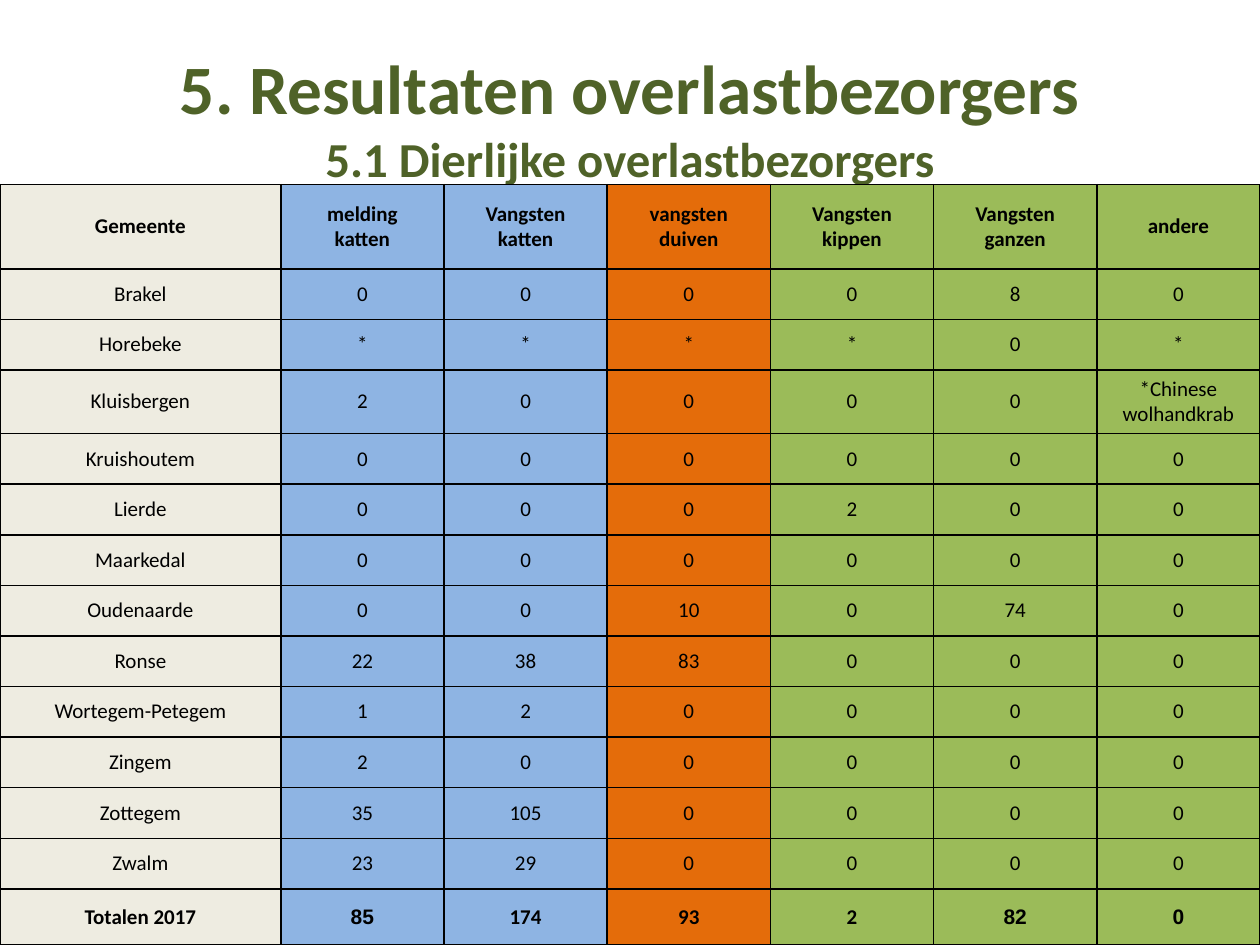
from dataclasses import dataclass

from lxml.etree import SubElement
from pptx import Presentation
from pptx.dml.color import RGBColor
from pptx.enum.text import MSO_ANCHOR, MSO_AUTO_SIZE, PP_ALIGN
from pptx.oxml.ns import qn
from pptx.slide import Slide
from pptx.table import _Cell
from pptx.util import Cm, Pt


@dataclass(frozen=True)
class Theme:
    title_color: str = "4F6228"
    ink: str = "000000"
    sand: str = "EEECE1"
    blue: str = "8EB4E3"
    orange: str = "E46C0A"
    green: str = "9BBB59"
    font: str = "Calibri"
    accent_font: str = "Arial"
    title_size: float = 39.6
    subtitle_size: float = 27.9
    table_size: float = 12
    border_width: float = 1


THEME = Theme()


@dataclass(frozen=True)
class Column:
    heading: str
    fill: str
    width: float = 3.29
    total_font: str = THEME.font


@dataclass(frozen=True)
class Municipality:
    name: str
    counts: tuple[str, ...]
    height: float = 1.02


COLUMNS = (
    Column("Gemeente", THEME.sand, width=5.66),
    Column("melding\nkatten", THEME.blue, total_font=THEME.accent_font),
    Column("Vangsten\nkatten", THEME.blue),
    Column("vangsten\nduiven", THEME.orange),
    Column("Vangsten\nkippen", THEME.green),
    Column("Vangsten\nganzen", THEME.green, total_font=THEME.accent_font),
    Column("andere", THEME.green, total_font=THEME.accent_font),
)

MUNICIPALITIES = (
    Municipality("Brakel", ("0", "0", "0", "0", "8", "0")),
    Municipality("Horebeke", ("*", "*", "*", "*", "0", "*")),
    Municipality("Kluisbergen", ("2", "0", "0", "0", "0", "*Chinese wolhandkrab"), 1.28),
    Municipality("Kruishoutem", ("0", "0", "0", "0", "0", "0")),
    Municipality("Lierde", ("0", "0", "0", "2", "0", "0")),
    Municipality("Maarkedal", ("0", "0", "0", "0", "0", "0")),
    Municipality("Oudenaarde", ("0", "0", "10", "0", "74", "0")),
    Municipality("Ronse", ("22", "38", "83", "0", "0", "0")),
    Municipality("Wortegem-Petegem", ("1", "2", "0", "0", "0", "0")),
    Municipality("Zingem", ("2", "0", "0", "0", "0", "0")),
    Municipality("Zottegem", ("35", "105", "0", "0", "0", "0")),
    Municipality("Zwalm", ("23", "29", "0", "0", "0", "0")),
)
TOTALS = Municipality("Totalen 2017", ("85", "174", "93", "2", "82", "0"), 1.13)
HEADER_HEIGHT = 1.7
TABLE_TOP = 3.72


def add_run(paragraph, text: str, size: float, color: str, bold: bool, font: str = THEME.font) -> None:
    run = paragraph.add_run()
    run.text = text
    run.font.name = font
    run.font.size = Pt(size)
    run.font.bold = bold
    run.font.color.rgb = RGBColor.from_string(color)


def add_title(slide: Slide) -> None:
    title = slide.shapes.title
    title.left, title.top, title.width, title.height = Cm(1.27), Cm(0.76), Cm(22.86), Cm(3.18)
    frame = title.text_frame
    frame.auto_size = MSO_AUTO_SIZE.NONE
    frame.vertical_anchor = MSO_ANCHOR.MIDDLE
    paragraph = frame.paragraphs[0]
    paragraph.alignment = PP_ALIGN.CENTER
    add_run(paragraph, "5. Resultaten overlastbezorgers", THEME.title_size, THEME.title_color, True)
    paragraph.add_line_break()
    add_run(paragraph, "5.1 Dierlijke overlastbezorgers", THEME.subtitle_size, THEME.title_color, True)


def add_borders(cell: _Cell) -> None:
    properties = cell._tc.get_or_add_tcPr()
    for position, side in enumerate(("lnL", "lnR", "lnT", "lnB")):
        line = SubElement(properties, qn(f"a:{side}"), w=str(Pt(THEME.border_width)))
        fill = SubElement(line, qn("a:solidFill"))
        SubElement(fill, qn("a:srgbClr"), val=THEME.ink)
        properties.insert(position, line)  # borders precede the fill


def fill_cell(cell: _Cell, text: str, fill: str, bold: bool, font: str) -> None:
    cell.fill.solid()
    cell.fill.fore_color.rgb = RGBColor.from_string(fill)
    add_borders(cell)
    cell.vertical_anchor = MSO_ANCHOR.MIDDLE
    cell.margin_left = cell.margin_right = Cm(0.08 if bold else 0.03)
    cell.margin_top = cell.margin_bottom = Cm(0)
    frame = cell.text_frame
    for index, line in enumerate(text.split("\n")):
        paragraph = frame.add_paragraph() if index else frame.paragraphs[0]
        paragraph.alignment = PP_ALIGN.CENTER
        add_run(paragraph, line, THEME.table_size, THEME.ink, bold, font)


def add_results_table(slide: Slide) -> None:
    heights = [HEADER_HEIGHT, *(place.height for place in MUNICIPALITIES), TOTALS.height]
    width = sum(column.width for column in COLUMNS)
    table = slide.shapes.add_table(
        len(heights), len(COLUMNS), Cm(0), Cm(TABLE_TOP), Cm(width), Cm(sum(heights))
    ).table
    table.first_row = table.horz_banding = False
    for row, height in zip(table.rows, heights):
        row.height = Cm(height)

    # Each column holds its heading, the counts and the total
    body = [(place.name, *place.counts) for place in (*MUNICIPALITIES, TOTALS)]
    last_row = len(heights) - 1
    for column_index, column in enumerate(COLUMNS):
        table.columns[column_index].width = Cm(column.width)
        texts = [column.heading, *(values[column_index] for values in body)]
        for row_index, text in enumerate(texts):
            bold = row_index in (0, last_row)
            font = column.total_font if row_index == last_row else THEME.font
            fill_cell(table.cell(row_index, column_index), text, column.fill, bold, font)


def main() -> None:
    presentation = Presentation()
    presentation.slide_width, presentation.slide_height = Cm(25.4), Cm(19.05)
    slide = presentation.slides.add_slide(presentation.slide_layouts[5])  # title only
    add_title(slide)
    add_results_table(slide)
    presentation.save("out.pptx")


if __name__ == "__main__":
    main()
